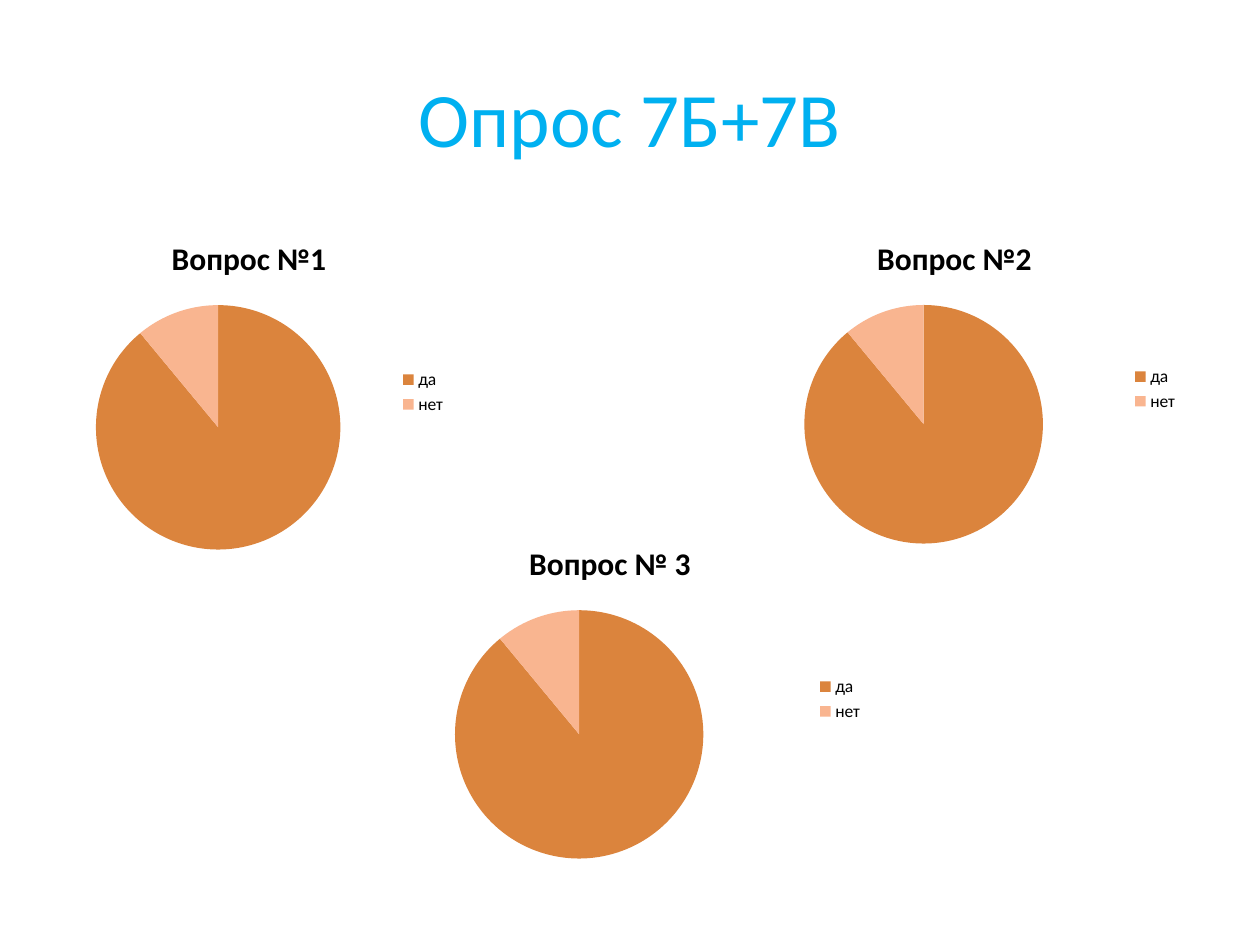
from dataclasses import dataclass

from pptx import Presentation
from pptx.chart.data import CategoryChartData
from pptx.dml.color import RGBColor
from pptx.enum.chart import XL_CHART_TYPE as ChartType, XL_LEGEND_POSITION as LegendSide
from pptx.enum.text import MSO_ANCHOR as Anchor, PP_ALIGN as Align
from pptx.util import Emu, Pt

PX_PER_INCH = 126
BLANK_LAYOUT = 6


def px(length):
    return Emu(round(length * 914400 / PX_PER_INCH))


@dataclass(frozen=True)
class Theme:
    font: str = "Calibri"
    heading: RGBColor = RGBColor(0x00, 0xB0, 0xF0)
    text: RGBColor = RGBColor(0x00, 0x00, 0x00)
    slices: tuple = (RGBColor(0xDB, 0x84, 0x3D), RGBColor(0xF9, 0xB5, 0x90))
    heading_size: int = 44
    chart_title_size: int = 18
    legend_size: int = 10


class SlideBuilder:
    def __init__(self, page, theme):
        self.page = page
        self.theme = theme

    def style(self, font, size, color, bold=False):
        font.name = self.theme.font
        font.size = Pt(size)
        font.color.rgb = color
        font.bold = bold

    def heading(self, text, bounds):
        box = self.page.shapes.add_textbox(*map(px, bounds))
        frame = box.text_frame
        frame.word_wrap = True
        frame.vertical_anchor = Anchor.MIDDLE
        para = frame.paragraphs[0]
        para.text = text
        para.alignment = Align.CENTER
        self.style(para.font, self.theme.heading_size, self.theme.heading)

    def pie(self, title, answers, bounds):
        """Add a titled pie chart of answer shares with a legend at the right."""
        data = CategoryChartData()
        data.categories = list(answers)
        data.add_series("Series 1", list(answers.values()))
        chart = self.page.shapes.add_chart(ChartType.PIE, *map(px, bounds), data).chart
        self.style(chart.font, self.theme.legend_size, self.theme.text)

        chart.has_title = True
        para = chart.chart_title.text_frame.paragraphs[0]
        para.text = title
        self.style(para.font, self.theme.chart_title_size, self.theme.text, bold=True)
        chart.chart_title.include_in_layout = False

        chart.has_legend = True
        chart.legend.position = LegendSide.RIGHT
        chart.legend.include_in_layout = False

        plot = chart.plots[0]
        plot.vary_by_categories = True
        for index, color in enumerate(self.theme.slices):
            slice_format = plot.series[0].points[index].format
            slice_format.fill.solid()
            slice_format.fill.fore_color.rgb = color
            slice_format.line.fill.background()


def main():
    deck = Presentation()
    deck.slide_width, deck.slide_height = px(1260), px(945)
    page = deck.slides.add_slide(deck.slide_layouts[BLANK_LAYOUT])
    builder = SlideBuilder(page, Theme())

    builder.heading("Опрос 7Б+7В", (63, 38, 1134, 157))

    answers = {"да": 89, "нет": 11}
    questions = {
        "Вопрос №1": (39, 217, 420, 350),
        "Вопрос №2": (718, 217, 473, 344),
        "Вопрос № 3": (344, 522, 532, 354),
    }
    for title, bounds in questions.items():
        builder.pie(title, answers, bounds)

    deck.save("out.pptx")


if __name__ == "__main__":
    main()
